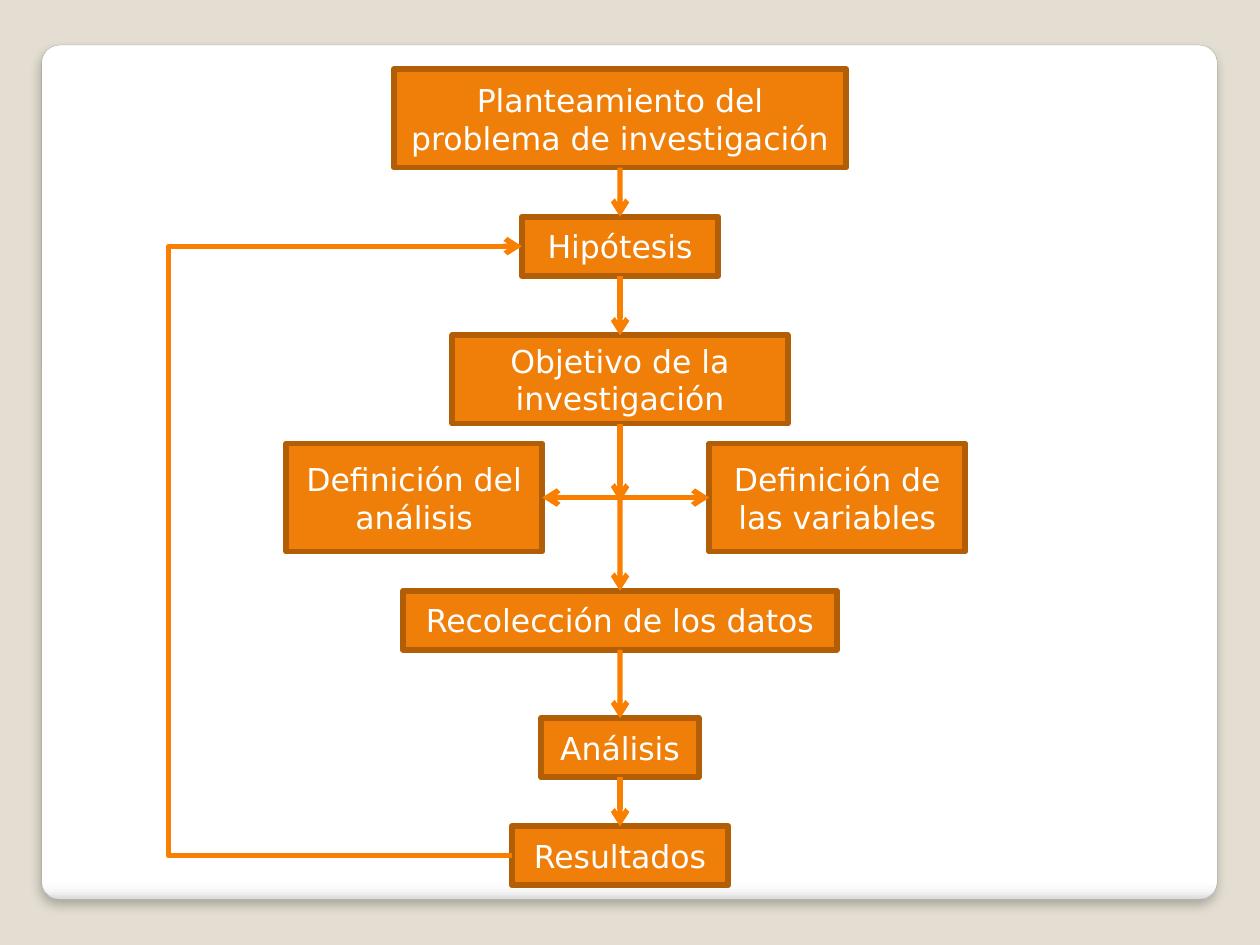
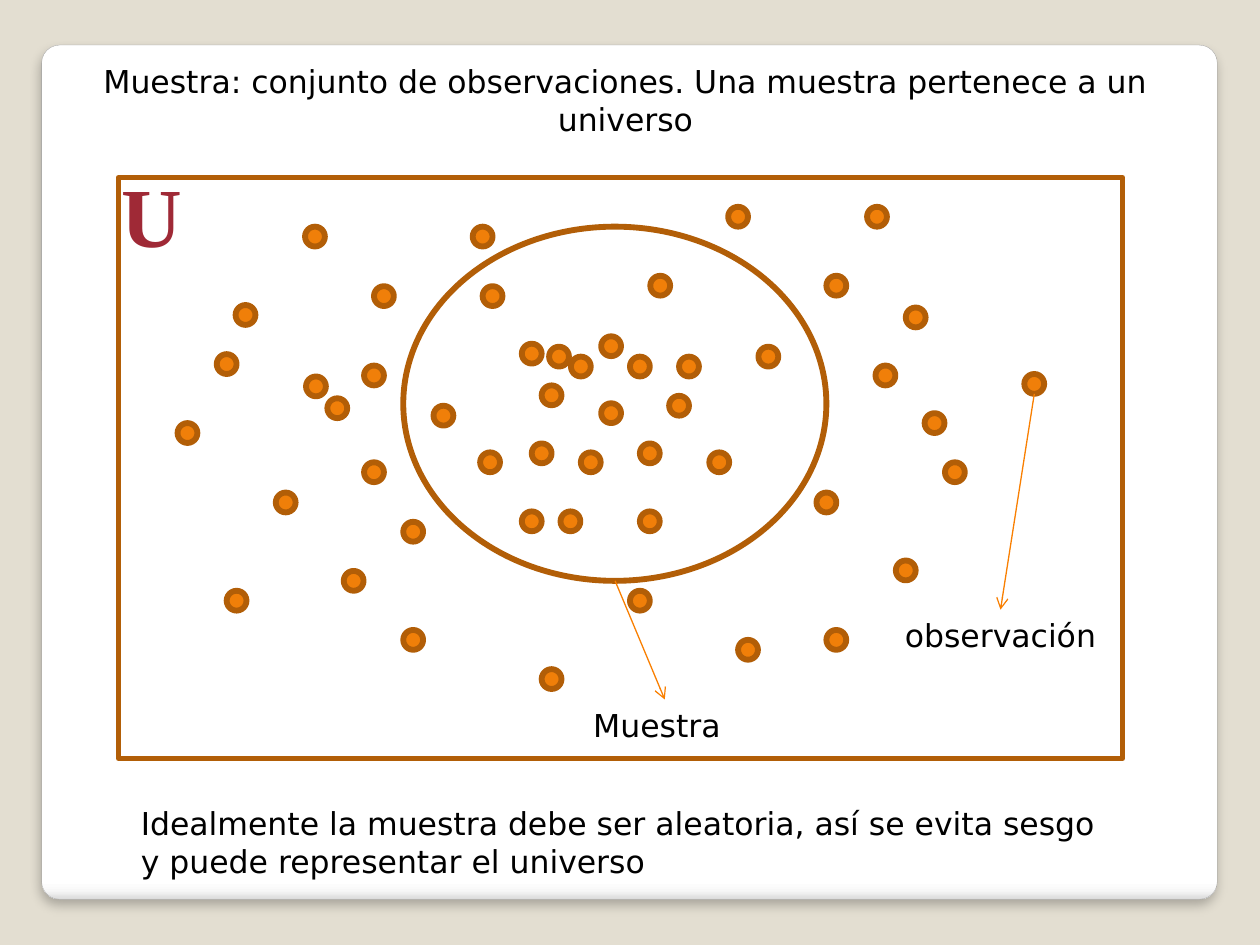
from lxml import etree
from pptx import Presentation
from pptx.dml.color import RGBColor
from pptx.enum.shapes import MSO_CONNECTOR, MSO_SHAPE
from pptx.enum.text import MSO_ANCHOR, MSO_AUTO_SIZE, PP_ALIGN
from pptx.oxml import parse_xml
from pptx.oxml.ns import nsdecls, qn
from pptx.util import Cm, Pt

RECTANGLE, ROUNDED, OVAL = MSO_SHAPE.RECTANGLE, MSO_SHAPE.ROUNDED_RECTANGLE, MSO_SHAPE.OVAL
STRAIGHT, ELBOW = MSO_CONNECTOR.STRAIGHT, MSO_CONNECTOR.ELBOW
LEFT, CENTER = PP_ALIGN.LEFT, PP_ALIGN.CENTER
MIDDLE = MSO_ANCHOR.MIDDLE
GROW = MSO_AUTO_SIZE.SHAPE_TO_FIT_TEXT
TOP_SIDE, LEFT_SIDE, BOTTOM_SIDE, RIGHT_SIDE = range(4)

SAND, ORANGE, BROWN, BRIGHT = "E3DED1", "F07F09", "B25E07", "F97F00"
WHITE, BLACK, WINE, GREY = "FFFFFF", "000000", "9F2936", "A4A4A4"
SANS, SERIF = "DejaVu Sans", "Times New Roman"
rgb = RGBColor.from_string


def write(frame, text, align, color, size=18, font=SANS, bold=False):
    paragraph = frame.paragraphs[0]
    paragraph.alignment = align
    run = paragraph.add_run()
    run.text = text
    run.font.size = Pt(size)
    run.font.name = font
    run.font.bold = bold
    run.font.color.rgb = rgb(color)


def arrow(slide, start, end, width=3, kind=STRAIGHT, ends=("tailEnd",)):
    connector = slide.shapes.add_connector(kind, *map(Cm, start + end))
    connector.line.color.rgb = rgb(BRIGHT)
    connector.line.width = Pt(width)
    for tip in ends:
        etree.SubElement(connector.line._get_or_add_ln(), qn(f"a:{tip}"), type="arrow")
    etree.SubElement(connector._element.spPr, qn("a:effectLst"))
    return connector


prs = Presentation()
prs.slide_width, prs.slide_height = Cm(25.4), Cm(19.05)
backdrop = prs.slide_master.background.fill
backdrop.solid()
backdrop.fore_color.rgb = rgb(SAND)

stops = "".join(
    f'<a:gs pos="{position * 1000}"><a:srgbClr val="{color}"/></a:gs>'
    for position, color in ((0, WHITE), (98, WHITE), (99, "F7F7F7"), (100, "DADADA"))
)
panel_gradient = (
    f'<a:gradFill {nsdecls("a")}><a:gsLst>{stops}</a:gsLst>'
    '<a:lin ang="5400000" scaled="0"/></a:gradFill>'
)
panel_shadow = (
    f'<a:effectLst {nsdecls("a")}><a:outerShdw blurRad="{Pt(6)}" dist="{Pt(4)}" '
    f'dir="5400000" rotWithShape="0"><a:srgbClr val="{BLACK}"><a:alpha val="25000"/>'
    "</a:srgbClr></a:outerShdw></a:effectLst>"
)

slides = [prs.slides.add_slide(prs.slide_layouts[6]) for _ in range(2)]
for slide in slides:
    panel = slide.shapes.add_shape(ROUNDED, Cm(0.84), Cm(0.91), Cm(23.7), Cm(17.22))
    panel.adjustments[0] = 0.021
    panel.line.color.rgb = rgb(GREY)
    panel.line.width = Pt(0.16)
    properties = panel._element.spPr
    properties.find(qn("a:prstGeom")).addnext(parse_xml(panel_gradient))
    properties.append(parse_xml(panel_shadow))
process, sampling = slides

AXIS = 12.5
SIDE_Y = 10.03
steps = [
    ("Planteamiento del problema de investigación", AXIS, 1.4, 9.12, 1.98),
    ("Hipótesis", AXIS, 4.37, 3.96, 1.19),
    ("Objetivo de la investigación", AXIS, 6.76, 6.76, 1.78),
    ("Recolección de los datos", AXIS, 11.91, 8.74, 1.19),
    ("Análisis", AXIS, 14.48, 3.18, 1.19),
    ("Resultados", AXIS, 16.66, 4.37, 1.19),
    ("Definición de las variables", 16.88, 8.94, 5.16, 2.18),
    ("Definición del análisis", 8.35, 8.94, 5.16, 2.18),
]
boxes = []
for text, center, top, width, height in steps:
    box = process.shapes.add_shape(
        RECTANGLE, Cm(center - width / 2), Cm(top), Cm(width), Cm(height)
    )
    box.shadow.inherit = False
    box.fill.solid()
    box.fill.fore_color.rgb = rgb(ORANGE)
    box.line.color.rgb = rgb(BROWN)
    box.line.width = Pt(3.35)
    box.text_frame.word_wrap = True
    box.text_frame.vertical_anchor = MIDDLE
    write(box.text_frame, text, CENTER, WHITE)
    boxes.append(box)
problem, hypothesis, objective, collection, analysis, results, variables, definition = boxes

for upper, lower in (
    (problem, hypothesis),
    (hypothesis, objective),
    (collection, analysis),
    (analysis, results),
):
    link = arrow(process, (AXIS, 0), (AXIS, 1))
    link.begin_connect(upper, BOTTOM_SIDE)
    link.end_connect(lower, TOP_SIDE)

sideways = arrow(process, (14.3, SIDE_Y), (10.93, SIDE_Y), ends=("headEnd", "tailEnd"))
sideways.begin_connect(variables, LEFT_SIDE)
sideways.end_connect(definition, RIGHT_SIDE)
arrow(process, (AXIS, 9.73), (AXIS, 11.91)).end_connect(collection, TOP_SIDE)
arrow(process, (AXIS, 8.54), (AXIS, 10.11)).begin_connect(objective, BOTTOM_SIDE)

feedback = arrow(process, (10.32, 17.26), (10.52, 4.97), kind=ELBOW)
feedback.begin_connect(results, LEFT_SIDE)
feedback.end_connect(hypothesis, LEFT_SIDE)
bend = (Cm(3.4) - feedback.begin_x) / (feedback.end_x - feedback.begin_x)
guides = feedback._element.spPr.find(qn("a:prstGeom")).get_or_add_avLst()
etree.SubElement(guides, qn("a:gd"), name="adj1", fmla=f"val {round(bend * 100000)}")

for outline, weight, area in (
    (RECTANGLE, 3, (2.39, 3.58, 20.24, 11.71)),
    (OVAL, 3.35, (8.13, 4.57, 8.53, 7.14)),
):
    region = sampling.shapes.add_shape(outline, *map(Cm, area))
    region.shadow.inherit = False
    region.fill.background()
    region.line.color.rgb = rgb(BROWN)
    region.line.width = Pt(weight)

DOT = 0.4
observations = [
    (10.72, 8.94), (12.12, 6.78), (12.12, 8.13), (12.9, 8.94), (10.52, 10.31),
    (13.49, 7.98), (11.07, 6.99), (12.9, 10.31), (11.71, 9.12), (11.51, 7.19),
    (13.69, 7.19), (14.3, 9.12), (10.52, 6.93), (11.3, 10.31), (12.7, 7.19),
    (10.92, 7.77), (13.11, 5.56), (15.29, 6.99), (14.68, 4.17), (16.66, 5.56),
    (16.46, 9.93), (20.65, 7.54), (18.06, 11.3), (18.64, 8.33), (12.7, 11.91),
    (16.66, 12.7), (14.88, 12.9), (17.48, 4.17), (18.26, 6.2), (19.05, 9.32),
    (17.65, 7.37), (4.75, 6.15), (6.17, 7.59), (6.6, 8.03), (7.34, 7.37),
    (8.13, 10.52), (6.15, 4.57), (4.37, 7.14), (5.56, 9.93), (4.57, 11.91),
    (3.58, 8.53), (6.93, 11.51), (8.13, 12.7), (7.54, 5.77), (7.34, 9.32),
    (9.53, 4.57), (8.74, 8.18), (9.73, 5.77), (9.68, 9.12), (10.92, 13.49),
]
for left, top in observations:
    dot = sampling.shapes.add_shape(OVAL, Cm(left), Cm(top), Cm(DOT), Cm(DOT))
    dot.shadow.inherit = False
    dot.fill.solid()
    dot.fill.fore_color.rgb = rgb(ORANGE)
    dot.line.color.rgb = rgb(BROWN)
    dot.line.width = Pt(3.35)

captions = []
for text, area, align in (
    ("Muestra: conjunto de observaciones. Una muestra pertenece a un universo",
     (0.71, 1.12, 23.8, 1.8), CENTER),
    ("Idealmente la muestra debe ser aleatoria, así se evita sesgo y puede representar el universo",
     (2.59, 16.08, 19.84, 1.8), LEFT),
    ("observación", (17.91, 12.29, 4.52, 1.02), CENTER),
    ("Muestra", (11.71, 14.1, 3.38, 1.02), LEFT),
):
    caption = sampling.shapes.add_textbox(*map(Cm, area))
    caption.text_frame.word_wrap = True
    caption.text_frame.auto_size = GROW
    write(caption.text_frame, text, align, BLACK)
    captions.append(caption)

universe = sampling.shapes.add_textbox(Cm(2.21), Cm(3.18), Cm(1.75), Cm(2.31))
universe.text_frame.word_wrap = False
universe.text_frame.auto_size = GROW
write(universe.text_frame, "U", LEFT, WINE, 48, SERIF, True)

observation_name, sample_name = captions[2:]
arrow(sampling, (20.85, 7.94), (20.17, 12.29), 0.75).end_connect(observation_name, TOP_SIDE)
arrow(sampling, (12.4, 11.71), (13.4, 14.1), 0.75).end_connect(sample_name, TOP_SIDE)

prs.save("out.pptx")
